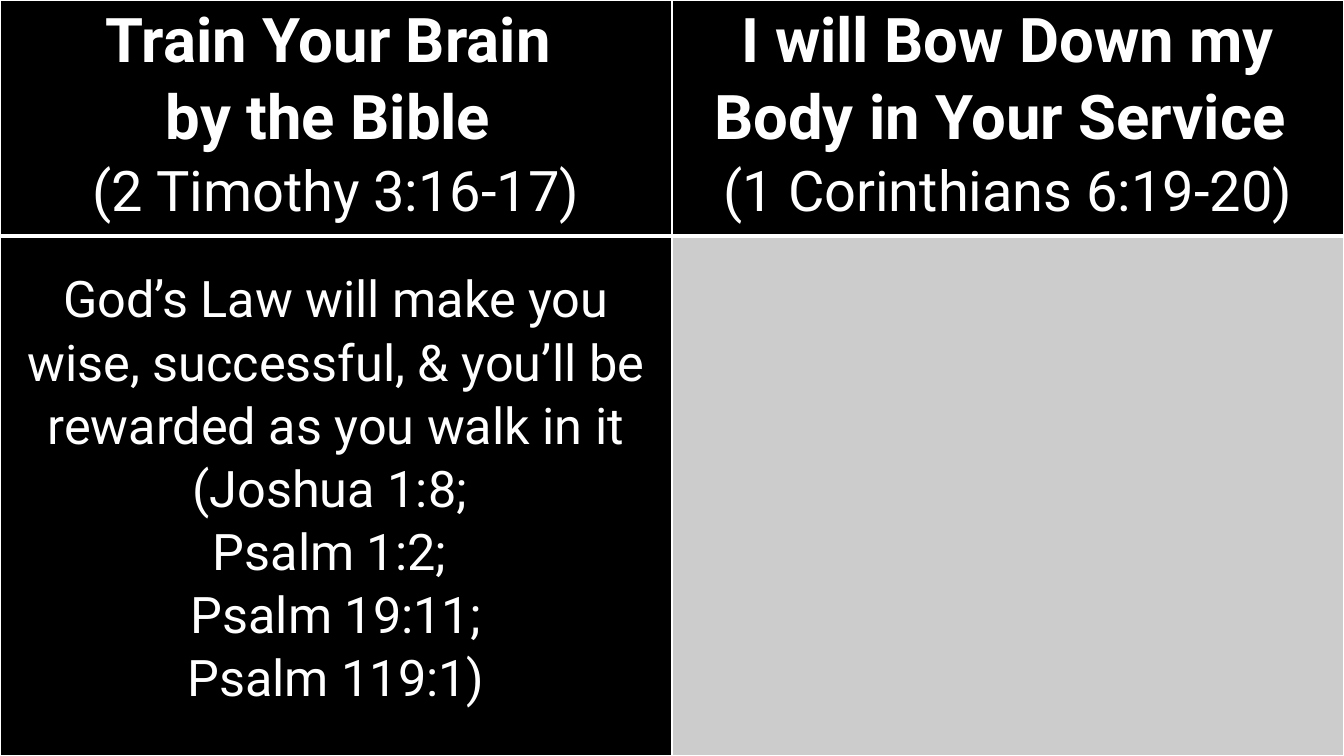
"""Build a two-column slide of Bible lessons as a table."""
from lxml.etree import SubElement
from pptx import Presentation
from pptx.dml.color import RGBColor
from pptx.enum.text import PP_ALIGN
from pptx.oxml.ns import qn
from pptx.util import Inches, Pt

BLACK, WHITE, GRAY = "000000", "FFFFFF", "CCCCCC"
FONT = "Roboto"
WIDTH, HEIGHT = 13.33, 7.5
ROW_HEIGHTS = [2.34, 5.16]
TOP_MARGINS = [0, 0.31]
BOTTOM_BORDERS = [3, 1]
TITLE, VERSE, BODY = (44, True), (40, False), (36, False)

ROWS = [
    [
        (BLACK, [("Train Your Brain ", TITLE),
                 ("by the Bible ", TITLE),
                 ("(2 Timothy 3:16-17)", VERSE)]),
        (BLACK, [("I will Bow Down my Body in Your Service ", TITLE),
                 ("(1 Corinthians 6:19-20)", VERSE)]),
    ],
    [
        (BLACK, [("God’s Law will make you wise, successful, & you’ll be "
                  "rewarded as you walk in it (Joshua 1:8; ", BODY),
                 ("Psalm 1:2; ", BODY),
                 ("Psalm 19:11;", BODY),
                 ("Psalm 119:1)", BODY)]),
        (GRAY, []),
    ],
]


def set_fill(fill, color):
    fill.solid()
    fill.fore_color.rgb = RGBColor.from_string(color)


def set_borders(cell, bottom):
    tcPr = cell._tc.get_or_add_tcPr()
    for side, width in (("L", 1), ("R", 1), ("T", 1), ("B", bottom)):
        ln = SubElement(tcPr, qn(f"a:ln{side}"), w=str(Pt(width)))
        fill = SubElement(ln, qn("a:solidFill"))
        SubElement(fill, qn("a:srgbClr"), val=WHITE)


def write_lines(tf, lines):
    for i, (text, (size, bold)) in enumerate(lines):
        p = tf.add_paragraph() if i else tf.paragraphs[0]
        p.text = text
        p.alignment = PP_ALIGN.CENTER
        p.line_spacing = 1.07
        font = p.runs[0].font
        font.name, font.size, font.bold = FONT, Pt(size), bold
        set_fill(font.fill, WHITE)


def main():
    prs = Presentation()
    prs.slide_width, prs.slide_height = Inches(WIDTH), Inches(HEIGHT)
    s = prs.slides.add_slide(prs.slide_layouts[6])
    set_fill(s.background.fill, BLACK)
    table = s.shapes.add_table(len(ROWS), len(ROWS[0]), 0, 0,
                               Inches(WIDTH), Inches(HEIGHT)).table
    for r, row in enumerate(ROWS):
        table.rows[r].height = Inches(ROW_HEIGHTS[r])
        for c, (color, lines) in enumerate(row):
            cell = table.cell(r, c)
            cell.margin_left = cell.margin_right = Inches(0.07)
            cell.margin_top, cell.margin_bottom = Inches(TOP_MARGINS[r]), 0
            set_borders(cell, BOTTOM_BORDERS[r])
            set_fill(cell.fill, color)
            write_lines(cell.text_frame, lines)
    prs.save("out.pptx")


if __name__ == "__main__":
    main()
